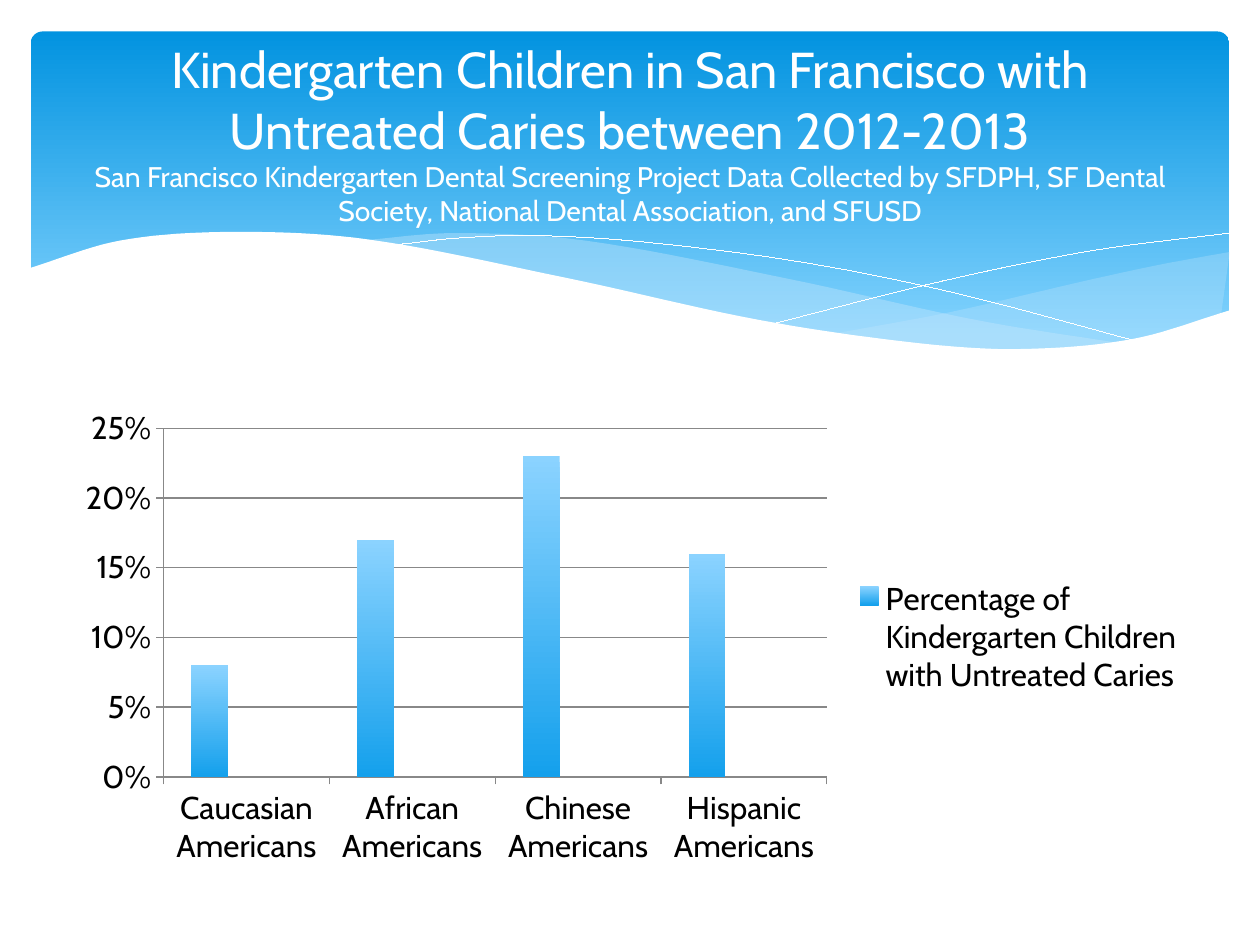
from lxml import etree
from pptx import Presentation
from pptx.chart.data import CategoryChartData
from pptx.dml.color import RGBColor
from pptx.enum.chart import XL_CHART_TYPE, XL_LEGEND_POSITION, XL_TICK_MARK
from pptx.enum.shapes import MSO_SHAPE
from pptx.enum.text import MSO_ANCHOR, MSO_AUTO_SIZE, PP_ALIGN
from pptx.oxml.ns import qn
from pptx.util import Inches, Pt

COLUMNS = XL_CHART_TYPE.COLUMN_CLUSTERED
RIGHT = XL_LEGEND_POSITION.RIGHT
OUTSIDE = XL_TICK_MARK.OUTSIDE
ROUNDED = MSO_SHAPE.ROUNDED_RECTANGLE
MIDDLE = MSO_ANCHOR.MIDDLE
NO_AUTOFIT = MSO_AUTO_SIZE.NONE
CENTER = PP_ALIGN.CENTER

FONT = "Cabin"
COLORS = {
    "white": "FFFFFF", "text": "000000", "axis": "888888",
    "banner_top": "0293E0", "banner_bottom": "83D3FE", "ribbon": "C6E7FC",
    "bar_top": "8BD3FF", "bar_bottom": "14A0EC",
    "second": "4584D3", "third": "5BD078",
}
UNITS_PER_INCH = 1000
STEPS = 10


def rgb(name):
    return RGBColor.from_string(COLORS[name])


def smooth_curve(knots):
    padded = [knots[0], *knots, knots[-1]]
    slopes = [(after[1] - before[1]) / (after[0] - before[0])
              for before, after in zip(padded, padded[2:])]
    curve = []
    for (x0, y0), (x1, y1), slope0, slope1 in zip(knots, knots[1:], slopes, slopes[1:]):
        span = x1 - x0
        for step in range(STEPS):
            t = step / STEPS
            ease = t * t * (3 - 2 * t)
            bend = span * t * (1 - t) * (slope0 * (1 - t) - slope1 * t)
            curve.append((x0 + span * t, y0 + (y1 - y0) * ease + bend))
    return curve + [knots[-1]]


deck = Presentation()
deck.slide_width, deck.slide_height = Inches(10), Inches(7.5)
W, H = deck.slide_width, deck.slide_height
slide = deck.slides.add_slide(deck.slide_layouts[5])
shapes = slide.shapes

banner_width = int(W * 0.951)
banner = shapes.add_shape(ROUNDED, (W - banner_width) // 2, H // 30, banner_width, int(H * 0.36))
banner.adjustments[0] = 0.034
banner.shadow.inherit = False
banner.line.fill.background()

shore = smooth_curve([
    (0.23, 2.13), (0.95, 1.91), (1.85, 1.84), (2.92, 1.9), (4.47, 2.2),
    (6.03, 2.54), (7.26, 2.72), (8.09, 2.77), (8.99, 2.69), (9.77, 2.46),
])
right_ribbon = smooth_curve([(6.61, 2.65), (7.53, 2.48), (8.61, 2.23), (9.21, 2.1), (9.76, 2)])
middle_ribbon = smooth_curve([
    (2.86, 1.91), (3.61, 1.85), (4.65, 1.91), (6.29, 2.22), (7.75, 2.54), (8.93, 2.73),
])
falling_line = smooth_curve([
    (3.09, 1.95), (3.63, 1.89), (4.25, 1.87), (5.1, 1.92), (6.36, 2.08), (7.6, 2.33), (9.07, 2.72),
])
rising_line = smooth_curve([(6.13, 2.57), (7.48, 2.23), (8.66, 1.99), (9.75, 1.85)])

waves = []
for crest, opacity in ((right_ribbon, 29), (middle_ribbon, 40)):
    first_x, last_x = crest[0][0], crest[-1][0]
    underside = [(x, y + 0.01) for x, y in reversed(shore) if first_x <= x <= last_x]
    waves.append((crest + underside, "ribbon", opacity))
waves += [(line, None, None) for line in (falling_line, rising_line)]
waves.append((shore + [(9.77, 3.29), (0.23, 3.29)], "white", 100))

for outline, wave_color, opacity in waves:
    start, *rest = [(x * UNITS_PER_INCH, y * UNITS_PER_INCH) for x, y in outline]
    builder = shapes.build_freeform(*start, scale=Inches(1) / UNITS_PER_INCH)
    builder.add_line_segments(rest, close=wave_color is not None)
    wave = builder.convert_to_shape()
    wave.shadow.inherit = False
    if wave_color is None:
        wave.fill.background()
        wave.line.color.rgb = rgb("white")
        wave.line.width = Pt(0.01)
        continue
    wave.line.fill.background()
    wave.fill.solid()
    wave.fill.fore_color.rgb = rgb(wave_color)
    if opacity < 100:
        tint = wave.element.spPr.find(qn("a:solidFill"))[0]
        etree.SubElement(tint, qn("a:alpha"), val=str(opacity * 1000))

caries = CategoryChartData(number_format="0%")
caries.categories = [f"{group} Americans" for group in ("Caucasian", "African", "Chinese", "Hispanic")]
caries.add_series("Percentage of Kindergarten Children with Untreated Caries", (0.08, 0.17, 0.23, 0.16))
for blank_series in ("Series 2", "Series 3"):
    caries.add_series(blank_series, (None,) * 4)

chart = shapes.add_chart(COLUMNS, int(W * 0.05), int(H * 0.423), int(W * 0.9), int(H * 0.503), caries).chart
chart.has_title = False
chart.font.name = FONT
chart.font.size = Pt(18)
chart.font.color.rgb = rgb("text")

plot = chart.plots[0]
plot.gap_width = 150
plot.overlap = 0
plot.vary_by_categories = False
percentage, *blanks = plot.series
for blank, color in zip(blanks, ("second", "third")):
    blank.format.fill.solid()
    blank.format.fill.fore_color.rgb = rgb(color)

for fill, part, end in ((banner.fill, "banner", 0.9), (percentage.format.fill, "bar", 1)):
    fill.gradient()
    fill.gradient_angle = 270
    for stop, edge, position in zip(fill.gradient_stops, ("top", "bottom"), (0, end)):
        stop.color.rgb = rgb(f"{part}_{edge}")
        stop.position = position

percent_axis = chart.value_axis
percent_axis.minimum_scale, percent_axis.maximum_scale, percent_axis.major_unit = 0, 0.25, 0.05
percent_axis.has_major_gridlines = True
percent_axis.major_gridlines.format.line.color.rgb = rgb("axis")
percent_axis.tick_labels.number_format = "0%"
percent_axis.tick_labels.number_format_is_linked = False
for axis in (percent_axis, chart.category_axis):
    axis.major_tick_mark = OUTSIDE
    axis.format.line.color.rgb = rgb("axis")

chart.has_legend = True
chart.legend.position = RIGHT
chart.legend.include_in_layout = False
legend_position = chart.legend._element.find(qn("c:legendPos"))
for index in (2, 1):
    hidden_entry = etree.Element(qn("c:legendEntry"))
    etree.SubElement(hidden_entry, qn("c:idx"), val=str(index))
    etree.SubElement(hidden_entry, qn("c:delete"), val="1")
    legend_position.addnext(hidden_entry)

title = shapes.title
title.left, title.top, title.width, title.height = int(W * 0.05), int(H * 0.049), int(W * 0.9), int(H * 0.183)
shapes.element.append(title.element)
heading = title.text_frame
heading.word_wrap = True
heading.auto_size = NO_AUTOFIT
heading.vertical_anchor = MIDDLE
headline = heading.paragraphs[0]
headline.alignment = CENTER
for wording, size in [
    ("Kindergarten Children in San Francisco with Untreated Caries between 2012-2013", 28.8),
    ("San Francisco Kindergarten Dental Screening Project Data Collected by SFDPH, "
     "SF Dental Society, National Dental Association, and SFUSD", 16.2),
]:
    if headline.runs:
        headline.add_line_break()
    run = headline.add_run()
    run.text = wording
    run.font.name = FONT
    run.font.size = Pt(size)
    run.font.color.rgb = rgb("white")

deck.save("out.pptx")
